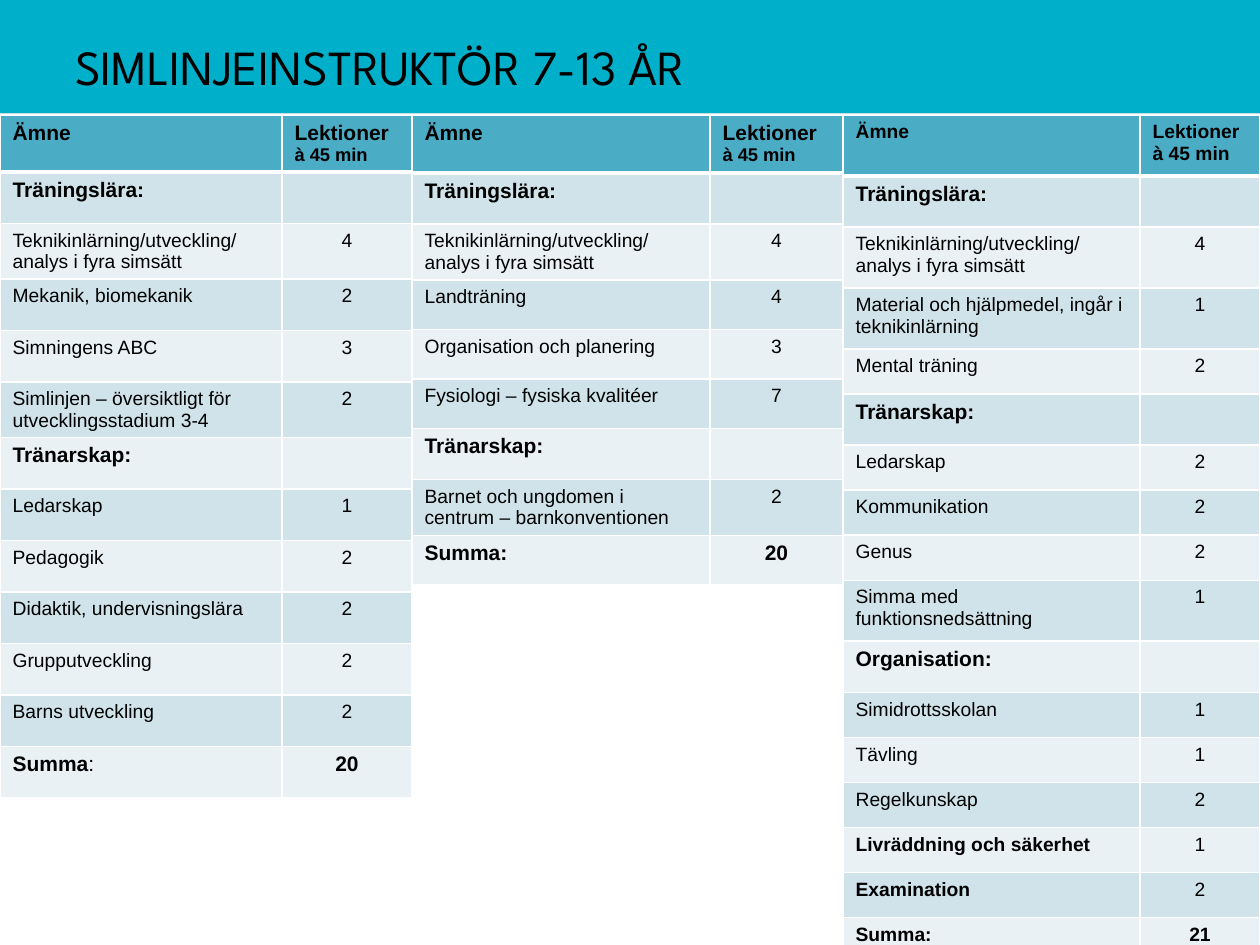
from dataclasses import dataclass

from lxml.etree import SubElement
from pptx import Presentation
from pptx.dml.color import RGBColor
from pptx.enum.text import MSO_ANCHOR, PP_ALIGN
from pptx.oxml import parse_xml
from pptx.oxml.ns import nsdecls, qn
from pptx.util import Emu, Pt


@dataclass(frozen=True)
class Theme:
    band: str = "00B0CA"
    rule: str = "B9E0E3"
    header: str = "4BACC6"
    stripes: tuple = ("D0E3EA", "E9F1F5")
    border: str = "FFFFFF"
    ink: str = "000000"
    title_font: str = "League Spartan"
    body_font: str = "Arial"
    title_size: float = 28
    heading_size: float = 12
    body_size: float = 11
    small_size: float = 10.5


THEME = Theme()
TITLE = "SIMLINJEINSTRUKTÖR 7-13 ÅR"
HEADER = ("Ämne", "Lektioner", "à 45 min")
TECHNIQUE = ("Teknikinlärning/utveckling/analys i fyra simsätt", 4, "tall")

# Rows are (subject, lessons, kind); a heading has no lessons.
COURSES = [
    {"left": 0, "columns": (282, 130), "height": 682, "header_height": 57, "tall_height": 55,
     "header_sizes": (THEME.heading_size, THEME.small_size), "sum_size": THEME.heading_size,
     "rows": [
         ("Träningslära:", None, "heading"),
         TECHNIQUE,
         ("Mekanik, biomekanik", 2, "plain"),
         ("Simningens ABC", 3, "plain"),
         ("Simlinjen – översiktligt för utvecklingsstadium 3-4", 2, "tall"),
         ("Tränarskap:", None, "heading"),
         ("Ledarskap", 1, "plain"),
         ("Pedagogik", 2, "plain"),
         ("Didaktik, undervisningslära", 2, "plain"),
         ("Grupputveckling", 2, "plain"),
         ("Barns utveckling", 2, "plain"),
         ("Summa:", 20, "sum light colon"),
     ]},
    {"left": 412, "columns": (298, 133), "height": 467, "header_height": 58, "tall_height": 56,
     "header_sizes": (THEME.heading_size, THEME.small_size), "sum_size": THEME.heading_size,
     "rows": [
         ("Träningslära:", None, "heading"),
         TECHNIQUE,
         ("Landträning", 4, "plain"),
         ("Organisation och planering", 3, "plain"),
         ("Fysiologi – fysiska kvalitéer", 7, "plain"),
         ("Tränarskap:", None, "heading"),
         ("Barnet och ungdomen i centrum – barnkonventionen", 2, "tall"),
         ("Summa:", 20, "sum"),
     ]},
    {"left": 843, "columns": (297, 120), "height": 830, "header_height": 61, "tall_height": 61,
     "header_sizes": (THEME.body_size, THEME.body_size), "sum_size": THEME.body_size,
     "rows": [
         ("Träningslära:", None, "heading"),
         TECHNIQUE,
         ("Material och hjälpmedel, ingår i teknikinlärning", 1, "tall"),
         ("Mental träning", 2, "plain"),
         ("Tränarskap:", None, "heading"),
         ("Ledarskap", 2, "plain"),
         ("Kommunikation", 2, "plain"),
         ("Genus", 2, "plain"),
         ("Simma med funktionsnedsättning", 1, "tall"),
         ("Organisation:", None, "heading"),
         ("Simidrottsskolan", 1, "plain"),
         ("Tävling", 1, "plain"),
         ("Regelkunskap", 2, "plain"),
         ("Livräddning och säkerhet", 1, "strong"),
         ("Examination", 2, "strong"),
         ("Summa:", 21, "sum"),
     ]},
]
PAGE_WIDTH, PAGE_HEIGHT = 1260, 945
BAND_HEIGHT, TABLE_TOP = 116, 115


def px(length):
    return Emu(round(length * 914400 / 126))


def color(value):
    return RGBColor.from_string(value)


def add_span(para, text, size, bold=False, font=THEME.body_font):
    span = para.add_run()
    span.text = text
    span.font.name = font
    span.font.size = Pt(size)
    span.font.bold = bold
    span.font.color.rgb = color(THEME.ink)


def style_cell(cell, fill, bottom_width=1):
    cell.fill.solid()
    cell.fill.fore_color.rgb = color(fill)
    properties = cell._tc.get_or_add_tcPr()
    for index, side in enumerate("LRTB"):
        width = Pt(bottom_width if side == "B" else 1)
        properties.insert(index, parse_xml(
            f'<a:ln{side} {nsdecls("a")} w="{width}"><a:solidFill>'
            f'<a:srgbClr val="{THEME.border}"/></a:solidFill></a:ln{side}>'))


def add_banner(page):
    title = page.shapes.title
    title.left, title.top, title.width, title.height = px(0), px(0), px(PAGE_WIDTH), px(BAND_HEIGHT)
    title.fill.solid()
    title.fill.fore_color.rgb = color(THEME.band)
    frame = title.text_frame
    frame.word_wrap = True
    frame.vertical_anchor = MSO_ANCHOR.MIDDLE
    frame.margin_left, frame.margin_top, frame.margin_bottom = px(75), px(16), px(0)
    para = frame.paragraphs[0]
    para.alignment = PP_ALIGN.LEFT
    add_span(para, TITLE, THEME.title_size, font=THEME.title_font)

    rule = page.shapes.add_connector(1, px(0), px(BAND_HEIGHT), px(PAGE_WIDTH), px(BAND_HEIGHT))
    rule.line.color.rgb = color(THEME.rule)
    rule.line.width = Pt(3)
    SubElement(rule._element.spPr, qn("a:effectLst"))


def row_heights(course):
    """Single-line rows share what the header and the two-line rows leave."""
    kinds = [kind for _, _, kind in course["rows"]]
    tall_count = kinds.count("tall")
    left_over = course["height"] - course["header_height"] - tall_count * course["tall_height"]
    single = left_over / (len(kinds) - tall_count)
    return [course["header_height"]] + [
        course["tall_height"] if kind == "tall" else single for kind in kinds]


def fill_header(table, sizes):
    subject, lessons, duration = HEADER
    first, second = table.cell(0, 0), table.cell(0, 1)
    add_span(first.text_frame.paragraphs[0], subject, sizes[0], True)
    add_span(second.text_frame.paragraphs[0], lessons, sizes[0], True)
    add_span(second.text_frame.add_paragraph(), duration, sizes[1], True)
    for cell in (first, second):
        style_cell(cell, THEME.header, bottom_width=3)


def fill_row(table, number, row, sum_size):
    subject, lessons, kind = row
    is_sum = kind.startswith("sum")
    size = sum_size if is_sum else THEME.heading_size if kind == "heading" else THEME.body_size
    label, count = table.cell(number, 0), table.cell(number, 1)
    para = label.text_frame.paragraphs[0]
    if kind == "sum light colon":
        add_span(para, subject[:-1], size, True)
        add_span(para, subject[-1], size)
    else:
        add_span(para, subject, size, is_sum or kind in ("heading", "strong"))
    if lessons is not None:
        para = count.text_frame.paragraphs[0]
        para.alignment = PP_ALIGN.CENTER
        add_span(para, str(lessons), size, is_sum)
    for cell in (label, count):
        style_cell(cell, THEME.stripes[(number - 1) % 2])


def add_course(page, course):
    heights = row_heights(course)
    table = page.shapes.add_table(
        len(heights), len(HEADER[:2]), px(course["left"]), px(TABLE_TOP),
        px(sum(course["columns"])), px(course["height"])).table
    for column, width in zip(table.columns, course["columns"]):
        column.width = px(width)
    for table_row, height in zip(table.rows, heights):
        table_row.height = px(height)
    fill_header(table, course["header_sizes"])
    for number, row in enumerate(course["rows"], start=1):
        fill_row(table, number, row, course["sum_size"])


def main():
    deck = Presentation()
    deck.slide_width, deck.slide_height = px(PAGE_WIDTH), px(PAGE_HEIGHT)
    page = deck.slides.add_slide(deck.slide_layouts[5])
    add_banner(page)
    for course in COURSES:
        add_course(page, course)
    deck.save("out.pptx")


if __name__ == "__main__":
    main()
